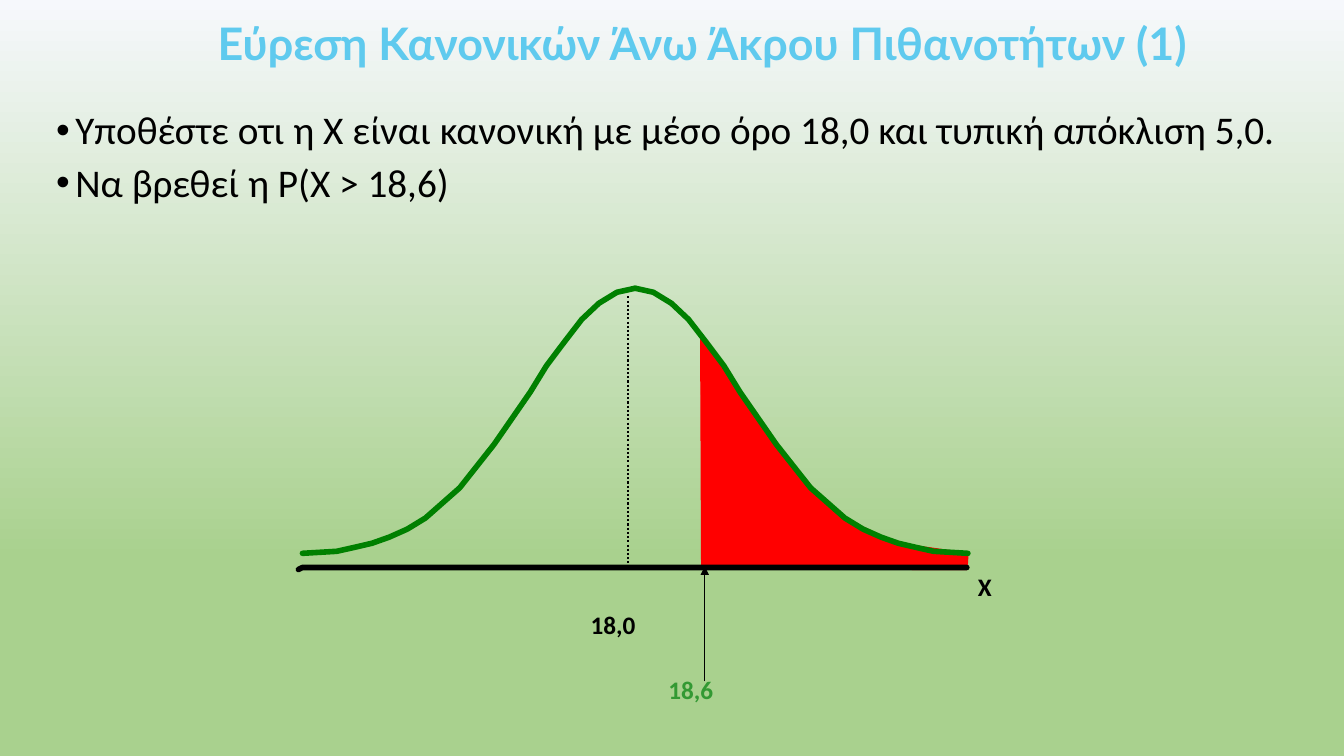
from lxml import etree
from pptx import Presentation
from pptx.dml.color import RGBColor
from pptx.enum.dml import MSO_LINE
from pptx.enum.shapes import MSO_CONNECTOR
from pptx.enum.text import MSO_ANCHOR, PP_ALIGN
from pptx.oxml.ns import qn
from pptx.util import Inches, Pt

STRAIGHT = MSO_CONNECTOR.STRAIGHT
DOTTED = MSO_LINE.ROUND_DOT
TOP, MIDDLE = MSO_ANCHOR.TOP, MSO_ANCHOR.MIDDLE
LEFT, JUSTIFY = PP_ALIGN.LEFT, PP_ALIGN.JUSTIFY

# The slide is a grid of 1333 columns by 750 rows
COLUMNS, ROWS = 1333, 750
CELL = Inches(0.01)

BLACK, RED, GREEN = "000000", "FF0000", "008000"
PADDING = (10, 5, 10, 5)
BODY = {"size": Pt(28), "name": "Calibri"}
LABEL = {"size": Pt(18), "name": "Calibri", "bold": True}
TITLE = {"size": Pt(32), "name": "Lato", "bold": True}

# Bell curve: left half, mirrored about its peak for the right half
PEAK = 630
LEFT_HALF = [
    (300, 549), (334, 547), (352, 543), (369, 539), (386, 533), (404, 525),
    (422, 514), (456, 484), (490, 441), (526, 389), (542, 363), (560, 339),
    (577, 317), (594, 301), (612, 290), (630, 286),
]
RIGHT_HALF = [(2 * PEAK - x, y) for x, y in LEFT_HALF]
UPPER_TAIL = [
    (696, 564), (695, 330), (704, 349), (721, 372), (733, 393), (745, 409),
    (760, 432), (783, 461), (804, 485), (837, 514), (890, 539), (960, 549),
    (959, 565),
]
AXIS = [(296, 565), (300, 563), (959, 563)]


def color(value):
    return RGBColor.from_string(value)


def paint_background(slide):
    fill = slide.background.fill
    fill.gradient()
    fill.gradient_angle = 270
    stops = ((0, "F6F8FC"), (0.74, "A9D18E"))
    for stop, (position, value) in zip(fill.gradient_stops, stops):
        stop.position = position
        stop.color.rgb = color(value)


def add_bullet(paragraph, indent):
    properties = paragraph._p.get_or_add_pPr()
    properties.set("marL", str(indent))
    properties.set("indent", str(-indent))
    etree.SubElement(properties, qn("a:buFont")).set("typeface", "Arial")
    etree.SubElement(properties, qn("a:buChar")).set("char", "•")


def add_text(slide, box, lines, font, value, padding=PADDING, anchor=TOP,
             spacing=1.0, bullets=False):
    """Add a text box; lines holds (text, alignment) pairs."""
    frame = slide.shapes.add_textbox(*(n * CELL for n in box)).text_frame
    frame.word_wrap = True
    frame.vertical_anchor = anchor
    for side, margin in zip(("left", "top", "right", "bottom"), padding):
        setattr(frame, f"margin_{side}", margin * CELL)
    for index, (text, alignment) in enumerate(lines):
        paragraph = frame.add_paragraph() if index else frame.paragraphs[0]
        if bullets:
            add_bullet(paragraph, 19 * CELL)
        paragraph.alignment = alignment
        paragraph.line_spacing = spacing
        paragraph.space_before = Pt(7.5 if index else 0)
        run = paragraph.add_run()
        run.text = text
        for name, setting in font.items():
            setattr(run.font, name, setting)
        run.font.color.rgb = color(value)


def add_outline(slide, points, value, width, filled=False):
    builder = slide.shapes.build_freeform(*points[0], scale=CELL)
    builder.add_line_segments(points[1:], close=filled)
    shape = builder.convert_to_shape()
    shape.shadow.inherit = False
    if filled:
        shape.fill.solid()
        shape.fill.fore_color.rgb = color(value)
    else:
        shape.fill.background()
    shape.line.color.rgb = color(value)
    shape.line.width = Pt(width)
    shape.get_or_add_ln().set("cap", "rnd")


def add_line(slide, start, end, width, dash=None, arrow=False):
    ends = (n * CELL for n in (*start, *end))
    connector = slide.shapes.add_connector(STRAIGHT, *ends)
    connector.line.color.rgb = color(BLACK)
    connector.line.width = Pt(width)
    if dash:
        connector.line.dash_style = dash
    if arrow:
        head = etree.SubElement(connector.get_or_add_ln(), qn("a:tailEnd"))
        head.set("type", "triangle")
    etree.SubElement(connector.element.spPr, qn("a:effectLst"))


def main():
    presentation = Presentation()
    presentation.slide_width = COLUMNS * CELL
    presentation.slide_height = ROWS * CELL
    slide = presentation.slides.add_slide(presentation.slide_layouts[6])
    paint_background(slide)

    # Problem statement
    add_text(slide, (46, 105, 1250, 114), [
        ("Υποθέστε οτι η X είναι κανονική με μέσο όρο 18,0 και τυπική "
         "απόκλιση 5,0.", JUSTIFY),
        ("Να βρεθεί η P(X > 18,6)", LEFT),
    ], BODY, BLACK, spacing=0.9, bullets=True)

    # Normal curve with its shaded upper tail
    add_outline(slide, UPPER_TAIL, RED, 1, filled=True)
    for half in (RIGHT_HALF, LEFT_HALF):
        add_outline(slide, half, GREEN, 4)
    add_outline(slide, AXIS, BLACK, 4)

    # Axis labels
    for text, left, top, width, value in (
        ("X", 960, 562, 77, BLACK),
        ("18,6", 653, 664, 120, "339933"),
        ("18,0", 576, 600, 120, BLACK),
    ):
        add_text(slide, (left, top, width, 61), [(text, LEFT)], LABEL, value)

    # Arrow to the limit and dotted line at the mean
    add_line(slide, (699, 676), (699, 562), 1, arrow=True)
    add_line(slide, (623, 294), (623, 562), 1.5, dash=DOTTED)

    # Title
    add_text(slide, (215, 20, 997, 50),
             [("Εύρεση Κανονικών Άνω Άκρου Πιθανοτήτων (1)", JUSTIFY)],
             TITLE, "5FCAEE", padding=(1, 1, 0, 0), anchor=MIDDLE, spacing=0.9)

    presentation.save("out.pptx")


if __name__ == "__main__":
    main()
